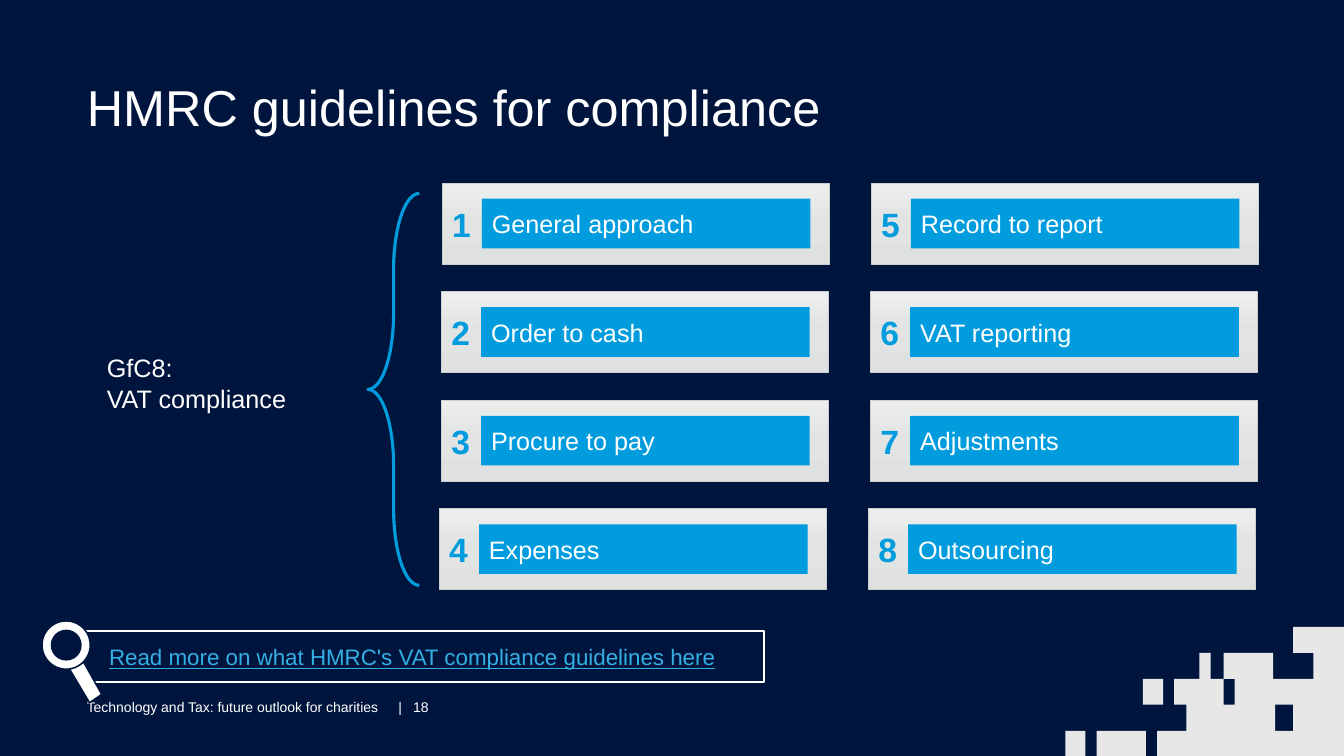
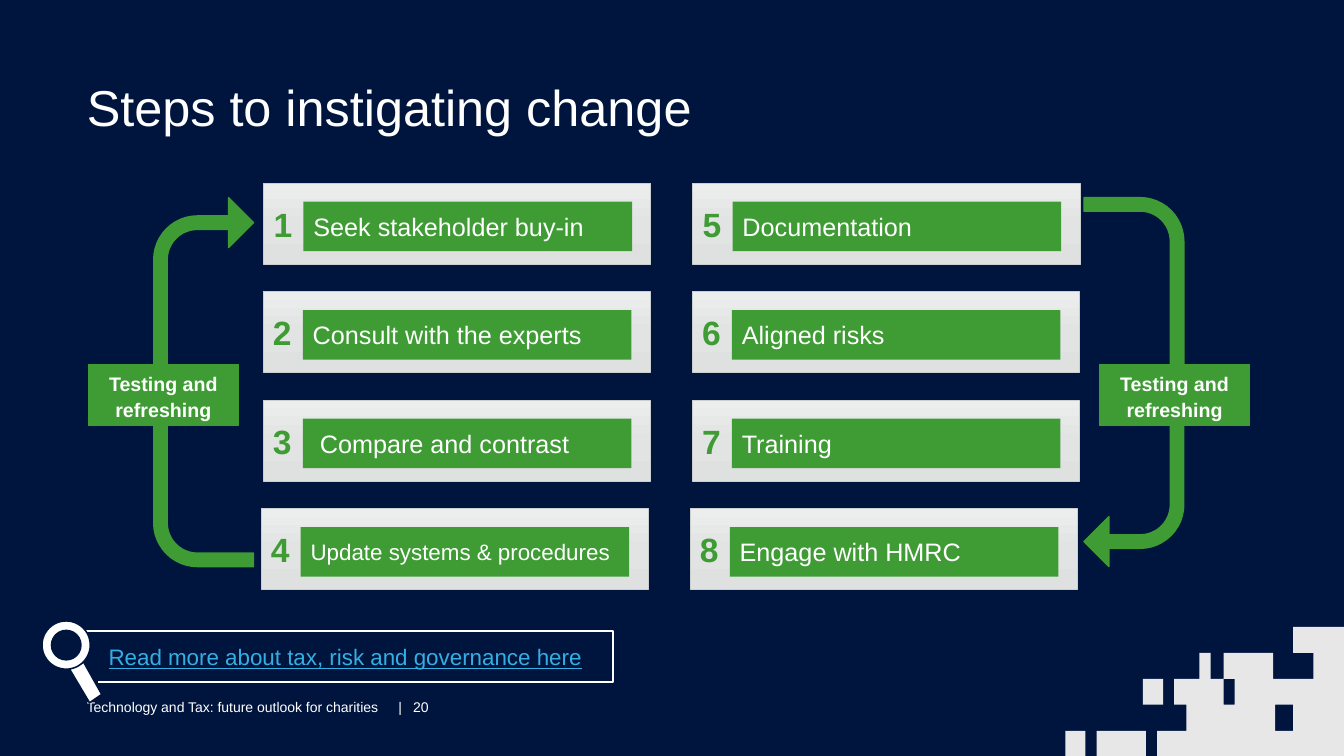
from copy import deepcopy

from pptx import Presentation
from pptx.dml.color import RGBColor
from pptx.enum.shapes import MSO_SHAPE as Kind
from pptx.enum.text import MSO_ANCHOR as Anchor, PP_ALIGN as Align
from pptx.oxml.ns import qn
from pptx.util import Pt

NAVY, WHITE, PALE = "00153D", "FFFFFF", "E7E7E8"
BLUE, GREEN, LINK = "009CDE", "3F9C35", "33AFE4"
EDGE, FADE = "CCCFCF", ("ECEDED", "E2E4E4", "DFE1E1")

PIXELS = [
    [(783.4, 522), (818.6, 522), (818.6, 540), (783.4, 540)],
    [(761, 522), (775.4, 522), (775.4, 540), (761, 540)],
    [(910.8, 503.4), (910.8, 522), (923.8, 522), (923.8, 503.4)],
    [(816.5, 485), (830.9, 485), (830.9, 503.4), (816.5, 503.4)],
    [(874, 485), (874, 503.4), (882, 503.4), (882, 485)],
    [(923.8, 447.8), (960, 447.8), (960, 540), (826.6, 540), (826.6, 522),
     (847.4, 522), (847.4, 503.4), (838.8, 503.4), (838.8, 485),
     (856.8, 485), (856.8, 466.4), (864.7, 466.4), (864.7, 485),
     (874, 485), (874, 466.4), (909.4, 466.4), (909.4, 485),
     (938.2, 485), (938.2, 466.4), (923.8, 466.4)],
]


def tint(code):
    return RGBColor.from_string(code)


class Deck:
    """Holds the deck style and the current slide."""

    face = "Arial"

    def __init__(self):
        self.prs = Presentation()
        self.prs.slide_width, self.prs.slide_height = Pt(960), Pt(540)

    def page(self, title, number):
        self.slide = self.prs.slides.add_slide(self.prs.slide_layouts[6])
        back = self.slide.background.fill
        back.solid()
        back.fore_color.rgb = tint(NAVY)
        self.form(PIXELS, PALE)
        self.text("Technology and Tax: future outlook for charities", 62, 499, 222, 13, 10)
        self.text("|", 284.5, 499, 5, 13, 10)
        self.text(number, 295.2, 499, 20, 13, 10)
        self.text(title, 62, 54.7, 553, 44, 36)

    def paint(self, shape, fill=None, line=None, width=1.0):
        shape.shadow.inherit = False
        if fill:
            shape.fill.solid()
            shape.fill.fore_color.rgb = tint(fill)
        else:
            shape.fill.background()
        if line:
            shape.line.color.rgb = tint(line)
            shape.line.width = Pt(width)
        else:
            shape.line.fill.background()
        return shape

    def label(self, shape, text, size, color=WHITE, bold=False, align=Align.LEFT):
        frame = shape.text_frame
        frame.text = text
        for para in frame.paragraphs:
            para.alignment = align
            font = para.font
            font.name, font.size, font.bold = self.face, Pt(size), bold
            font.color.rgb = tint(color)
        return frame

    def text(self, text, left, top, wide, high, size):
        box = self.slide.shapes.add_textbox(Pt(left), Pt(top), Pt(wide), Pt(high))
        frame = self.label(box, text, size)
        frame.margin_left = frame.margin_right = 0
        frame.margin_top = frame.margin_bottom = 0

    def shape(self, kind, left, top, wide, high, *look):
        item = self.slide.shapes.add_shape(kind, Pt(left), Pt(top), Pt(wide), Pt(high))
        return self.paint(item, *look)

    def form(self, loops, fill, line=None, width=1.0, close=True):
        first, *rest = [[(Pt(x), Pt(y)) for x, y in loop] for loop in loops]
        trace = self.slide.shapes.build_freeform(*first[0], scale=1.0)
        trace.add_line_segments(first[1:], close=close)
        for loop in rest:
            trace.move_to(*loop[0])
            trace.add_line_segments(loop[1:], close=close)
        return self.paint(trace.convert_to_shape(), fill, line, width)

    def card(self, number, text, left, top, drop, color):
        box = self.shape(Kind.RECTANGLE, left, top, 276.5, 57.6, PALE, EDGE, 0.5)
        box.fill.gradient()
        box.fill.gradient_angle = 270
        stops = box._element.spPr.find(qn("a:gradFill")).find(qn("a:gsLst"))
        stops.insert(1, deepcopy(stops[0]))
        for index, stop in enumerate(box.fill.gradient_stops):
            stop.position = index / 2
            stop.color.rgb = tint(FADE[index])
        self.label(box, str(number), 24, color, True).vertical_anchor = Anchor.MIDDLE
        bar = self.shape(Kind.RECTANGLE, left + 28.4, top + drop, 234.7, 35.5, color)
        self.label(bar, text, 18).vertical_anchor = Anchor.MIDDLE
        return bar

    def cards(self, names, left, drop, color):
        bars = []
        for index, name in enumerate(names):
            col, row = divmod(index, 4)
            shift = (0, 0.5, 0.5, 2)[row]
            bars.append(self.card(index + 1, name, left + 306.5 * col - shift,
                                  131 + 77.5 * row, drop, color))
        return bars

    def link(self, text, left, right):
        loop = [(left, 450.7), (right, 450.7), (right, 487.4), (left + 15, 487.4)]
        plate = self.form([loop], NAVY, WHITE, 1.5, False)
        frame = self.label(plate, text, 16, LINK, align=Align.CENTER)
        frame.vertical_anchor = Anchor.MIDDLE
        frame.paragraphs[0].font.underline = True
        stem = [(49.7, 478), (64, 502), (72.7, 496), (59.8, 473)]
        self.form([stem], WHITE, NAVY, 1.12)
        self.shape(Kind.OVAL, 30, 443.5, 34.5, 34.5, WHITE, NAVY, 1.12)
        self.shape(Kind.OVAL, 36.8, 450.3, 21, 21, NAVY, NAVY, 1.12)

    def brace(self, left, top, wide, high, color):
        item = self.shape(Kind.LEFT_BRACE, left, top, wide, high, None, color, 2.25)
        item.adjustments[0] = 1.48

    def loop(self, left, color, flip=False):
        item = self.shape(Kind.U_TURN_ARROW, left, 237.3, 263.5, 71.3, color, color, 1)
        for index, value in enumerate((0.135, 0.25, 0.25, 0.438, 1)):
            item.adjustments[index] = value
        item.rotation = 270
        if flip:
            frame = item._element.spPr.find(qn("a:xfrm"))
            frame.set("flipH", "1")
            frame.set("flipV", "1")

    def tag(self, text, left, color):
        item = self.shape(Kind.RECTANGLE, left, 260.6, 107.5, 43.2, color, color, 0.75)
        frame = self.label(item, text, 14, bold=True, align=Align.CENTER)
        frame.vertical_anchor = Anchor.TOP
        frame.paragraphs[0].line_spacing = 1.1


def main():
    deck = Deck()

    deck.page("HMRC guidelines for compliance", "18")
    deck.text("GfC8:\nVAT compliance", 76.3, 252, 140, 44, 18)
    deck.cards(["General approach", "Order to cash", "Procure to pay", "Expenses",
                "Record to report", "VAT reporting", "Adjustments", "Outsourcing"],
               315.8, 11, BLUE)
    deck.brace(262.8, 138.2, 36.7, 280, BLUE)
    deck.link("Read more on what HMRC's VAT compliance guidelines here", 43.2, 545.8)

    deck.page("Steps to instigating change", "20")
    bars = deck.cards(["Seek stakeholder buy-in", "Consult with the experts",
                       "Compare and contrast", "Update systems & procedures",
                       "Documentation", "Aligned risks", "Training",
                       "Engage with HMRC"], 188.4, 13, GREEN)
    bars[2].text_frame.margin_left = Pt(12.2)
    bars[3].text_frame.paragraphs[0].font.size = Pt(16)
    deck.loop(13.7, GREEN)
    deck.loop(678.2, GREEN, True)
    deck.link("Read more about tax, risk and governance here", 55.4, 437.8)
    for left in (63, 785.3):
        deck.tag("Testing and refreshing", left, GREEN)

    deck.prs.save("out.pptx")


if __name__ == "__main__":
    main()
